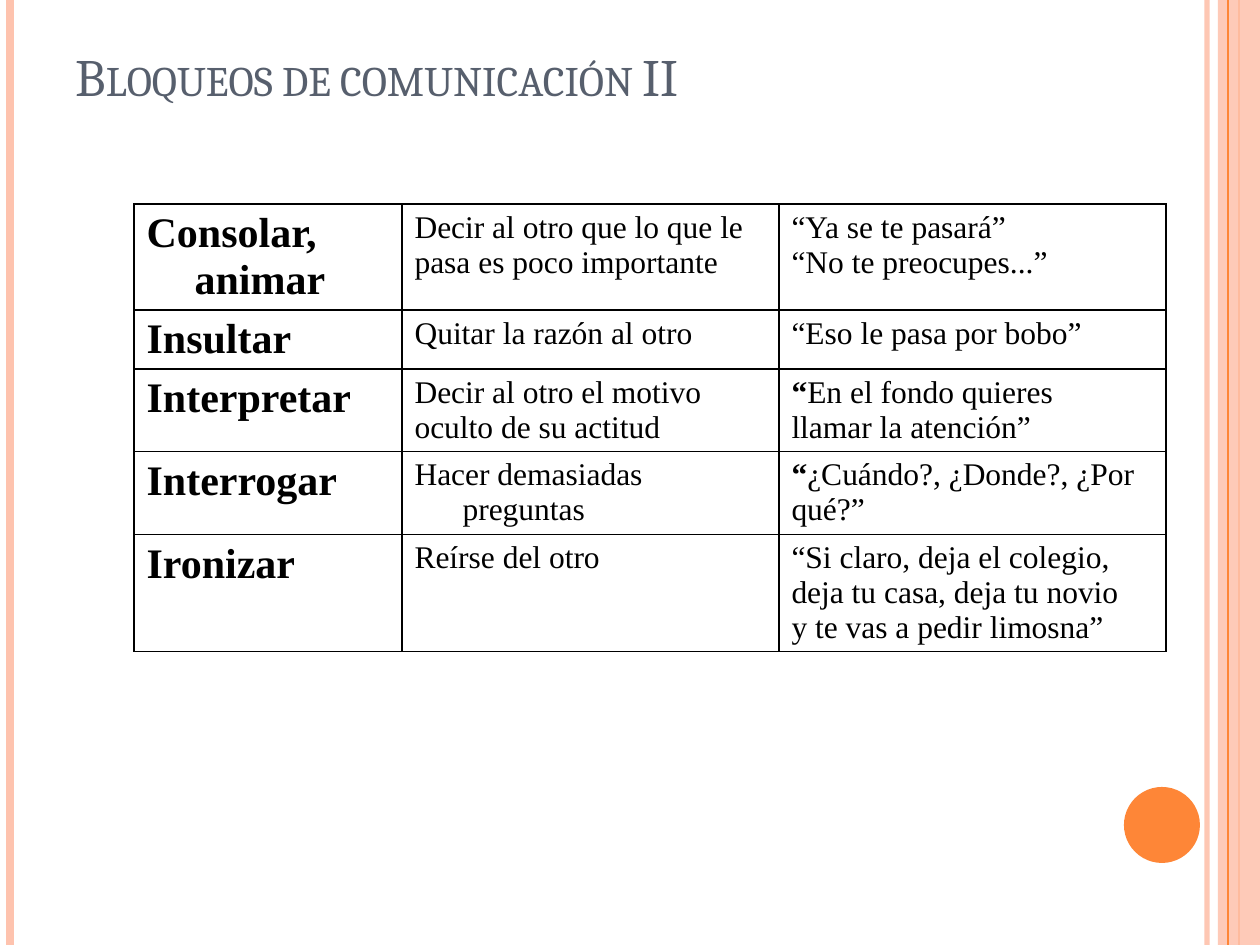
from dataclasses import dataclass

from lxml.etree import SubElement
from pptx import Presentation
from pptx.dml.color import RGBColor
from pptx.enum.shapes import MSO_CONNECTOR, MSO_SHAPE
from pptx.enum.text import MSO_ANCHOR, PP_ALIGN
from pptx.oxml.ns import qn
from pptx.util import Pt

W, H = 1260, 945
EMU_PER_PX = 914400 / 126


@dataclass(frozen=True)
class Theme:
    orange: str = "FE8637"
    peach: str = "FEC3AE"
    slate: str = "575F6D"
    black: str = "000000"
    title_font: str = "Cambria"
    body_font: str = "Times New Roman"
    title_size: int = 30
    term_size: int = 24
    body_size: int = 18


THEME = Theme()
COLUMNS = (268, 377, 387)
ROW_HEIGHTS = (106, 59, 82, 83, 117)
HANGING = 48
# Each cell is a list of paragraphs; a leading "*" marks a bold opening quote
ROWS = [
    (["Consolar, animar"],
     ["Decir al otro que lo que le", "pasa es poco importante"],
     ["“Ya se te pasará”", "“No te preocupes...”"]),
    (["Insultar"], ["Quitar la razón al otro"], ["“Eso le pasa por bobo”"]),
    (["Interpretar"],
     ["Decir al otro el motivo", "oculto de su actitud"],
     ["*“En el fondo quieres", "llamar la atención”"]),
    (["Interrogar"],
     ["Hacer demasiadas preguntas"],
     ["*“¿Cuándo?, ¿Donde?, ¿Por", "qué?”"]),
    (["Ironizar"], ["Reírse del otro"],
     ["“Si claro, deja el colegio,", "deja tu casa, deja tu novio",
      "y te vas a pedir limosna”"]),
]


def px(n):
    return round(n * EMU_PER_PX)


def rgb(color):
    return RGBColor.from_string(color)


def set_alpha(fill_parent, percent):
    color = fill_parent.find(".//" + qn("a:srgbClr"))
    SubElement(color, qn("a:alpha"), val=str(percent * 1000))


def add_run(p, text, font, size, color, bold=False):
    r = p.add_run()
    r.text = text
    r.font.name, r.font.size, r.font.bold = font, Pt(size), bold
    r.font.color.rgb = rgb(color)
    return r


def add_rule(slide, x, top, height, color, width, alpha=None):
    line = slide.shapes.add_connector(
        MSO_CONNECTOR.STRAIGHT, px(x), px(top), px(x), px(top + height))
    line.line.color.rgb = rgb(color)
    line.line.width = Pt(width)
    sp_pr = line._element.spPr
    if alpha:
        set_alpha(sp_pr, alpha)
    SubElement(sp_pr, qn("a:effectLst"))


def add_solid(slide, kind, box, color, alpha=None):
    sp = slide.shapes.add_shape(kind, *map(px, box))
    sp.shadow.inherit = False
    sp.fill.solid()
    sp.fill.fore_color.rgb = rgb(color)
    sp.line.fill.background()
    if alpha:
        set_alpha(sp._element.spPr, alpha)


def add_frame(slide, box):
    """Vertical bands on both edges and the corner disc."""
    x, y, w, h = box
    right = x + w
    add_rule(slide, right - 53, y, h, THEME.peach, 3, 93)
    add_rule(slide, x + 10, y, h, THEME.peach, 4.5)
    add_rule(slide, right - 21, y, h, THEME.orange, 1.5)
    add_solid(slide, MSO_SHAPE.RECTANGLE, (right - 42, y, 42, h), THEME.peach, 87)
    add_rule(slide, right - 32, y, h, THEME.orange, 0.75)
    add_solid(slide, MSO_SHAPE.OVAL, (right - 136, y + h - 158, 76, 76), THEME.orange)


def add_title(slide, box, text):
    title = slide.shapes.title
    title.left, title.top, title.width, title.height = map(px, box)
    tf = title.text_frame
    tf.word_wrap = True
    tf.vertical_anchor = MSO_ANCHOR.TOP
    p = tf.paragraphs[0]
    p.alignment = PP_ALIGN.LEFT
    r = add_run(p, text, THEME.title_font, THEME.title_size, THEME.slate)
    r.font._element.set("cap", "small")


def add_borders(cell):
    tc_pr = cell._tc.get_or_add_tcPr()
    for i, side in enumerate(("a:lnL", "a:lnR", "a:lnT", "a:lnB")):
        ln = tc_pr.makeelement(qn(side), {"w": str(Pt(1))})
        fill = SubElement(ln, qn("a:solidFill"))
        SubElement(fill, qn("a:srgbClr"), val=THEME.black)
        tc_pr.insert(i, ln)  # borders come before the cell fill


def fill_cell(cell, lines, is_term):
    cell.fill.background()
    add_borders(cell)
    size = THEME.term_size if is_term else THEME.body_size
    style = (THEME.body_font, size, THEME.black)
    tf = cell.text_frame
    for i, text in enumerate(lines):
        p = tf.add_paragraph() if i else tf.paragraphs[0]
        p_pr = p._p.get_or_add_pPr()
        p_pr.set("marL", str(px(HANGING)))
        p_pr.set("indent", str(-px(HANGING)))
        if text.startswith("*"):
            add_run(p, text[1], *style, bold=True)
            text = text[2:]
        add_run(p, text, *style, bold=is_term)


def add_block_table(slide, x, y):
    """Communication blocks: term, meaning, example."""
    frame = slide.shapes.add_table(
        len(ROWS), len(COLUMNS), px(x), px(y), px(sum(COLUMNS)), px(sum(ROW_HEIGHTS)))
    table = frame.table
    table.first_row = table.horz_banding = False
    for column, width in zip(table.columns, COLUMNS):
        column.width = px(width)
    for row, height, contents in zip(table.rows, ROW_HEIGHTS, ROWS):
        row.height = px(height)
        for i, (cell, lines) in enumerate(zip(row.cells, contents)):
            fill_cell(cell, lines, is_term=i == 0)


def main():
    prs = Presentation()
    prs.slide_width, prs.slide_height = px(W), px(H)
    slide = prs.slides.add_slide(prs.slide_layouts[5])
    add_frame(slide, (0, 0, W, H))
    add_title(slide, (63, 38, 1134, 157), "Bloqueos de comunicación II")
    add_block_table(slide, 134, 204)
    prs.save("out.pptx")


if __name__ == "__main__":
    main()
